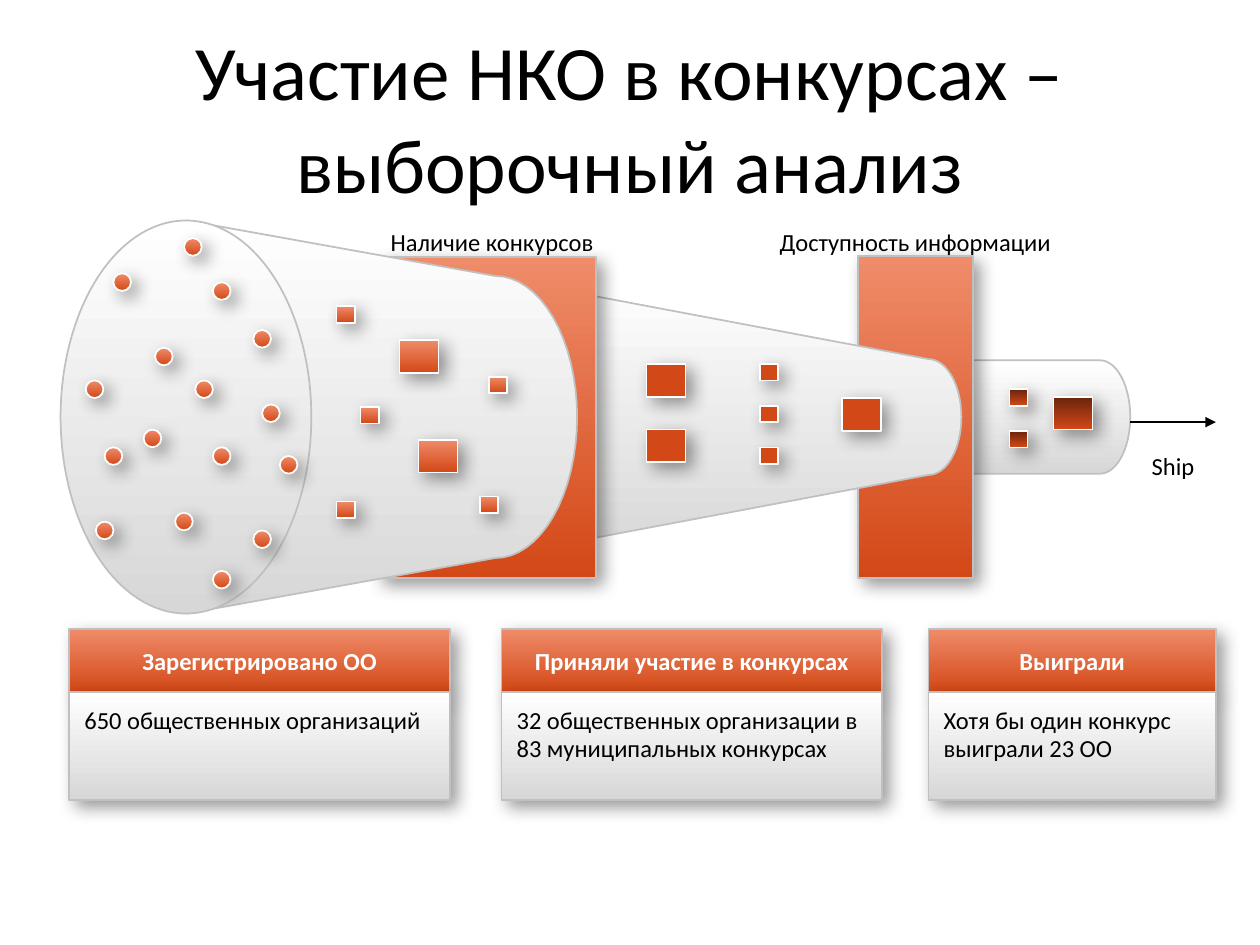
from math import cos, pi, sin

from lxml import etree
from pptx import Presentation
from pptx.dml.color import RGBColor
from pptx.enum.shapes import MSO_CONNECTOR, MSO_SHAPE
from pptx.enum.text import MSO_ANCHOR, PP_ALIGN
from pptx.oxml import parse_xml
from pptx.oxml.ns import nsdecls, qn
from pptx.util import Pt

RECT, OVAL = MSO_SHAPE.RECTANGLE, MSO_SHAPE.OVAL
STRAIGHT = MSO_CONNECTOR.STRAIGHT
CENTER, LEFT = PP_ALIGN.CENTER, PP_ALIGN.LEFT
TOP, MIDDLE = MSO_ANCHOR.TOP, MSO_ANCHOR.MIDDLE

COLORS = {
    "black": "000000", "white": "FFFFFF", "silver": "D7D7D7", "edge": "C0C0C0",
    "coral": "EF8C6A", "orange": "D34817", "brown": "69240C",
}
METAL = ("white", "silver")
WARM = ("coral", "orange")
FLAT = ("orange",)
DARK = ("brown", "orange")

DOTS = [
    (54, 72.7), (77, 91.4), (47.5, 119.5), (25.2, 129.6), (14.4, 91.4), (30.2, 30.2),
    (70.6, 10.1), (87.1, 35.3), (110.2, 62.6), (115.2, 105.1), (125.3, 134.6),
    (87.1, 129.6), (65.5, 167), (87.1, 200.2), (110.2, 177.1), (20.2, 172.1),
]
SMALL_SQUARES = [
    (WARM, [(157.7, 49), (171.4, 106.6), (157.7, 160.6), (239.8, 157.7), (244.8, 89.3)]),
    (FLAT, [(399.6, 82.1 + 23.8 * row) for row in range(3)]),
    (DARK, [(542.2, 96.5 + 23.8 * row) for row in range(2)]),
]
LARGE_SQUARES = [
    (WARM, [(193.7, 68.4), (204.5, 125.3)]),
    (FLAT, [(334.8, 82.1), (334.8, 119.5), (446.4, 101.5)]),
    (DARK, [(567.4, 100.8)]),
]
CARDS = [
    (39.6, 217.5, "Зарегистрировано ОО", "650 общественных организаций"),
    (286.6, 217.5, "Приняли участие в конкурсах",
     "32 общественных организации в 83 муниципальных конкурсах"),
    (530.6, 164.2, "Выиграли", "Хотя бы один конкурс выиграли 23 ОО"),
]


def rgb(name):
    return RGBColor.from_string(COLORS[name])


def paint(shape, fill, edge="edge"):
    shape.shadow.inherit = False
    if len(fill) == 1:
        shape.fill.solid()
        shape.fill.fore_color.rgb = rgb(fill[0])
    else:
        shape.fill.gradient()
        shape.fill.gradient_angle = 270
        for stop, name in zip(shape.fill.gradient_stops, fill):
            stop.color.rgb = rgb(name)
    shape.line.color.rgb = rgb(edge)
    shape.line.width = Pt(1)


def cast_shadow(shape):
    effects = shape.element.spPr.find(qn("a:effectLst"))
    effects.append(parse_xml(
        f'<a:outerShdw {nsdecls("a")} blurRad="{Pt(10)}" dist="{Pt(5)}" dir="2700000" '
        f'algn="tl" rotWithShape="0"><a:srgbClr val="{COLORS["black"]}">'
        '<a:alpha val="40000"/></a:srgbClr></a:outerShdw>'))


def add_block(slide, kind, box, fill, edge="edge", shadow=True):
    block = slide.shapes.add_shape(kind, *map(Pt, box))
    paint(block, fill, edge)
    if shadow:
        cast_shadow(block)
    return block


def write(shape, text, size=14, color="black", bold=False, align=CENTER,
          anchor=MIDDLE, insets=(0, 0, 0, 0), wrap=True):
    frame = shape.text_frame
    frame.word_wrap = wrap
    frame.vertical_anchor = anchor
    (frame.margin_left, frame.margin_top,
     frame.margin_right, frame.margin_bottom) = map(Pt, insets)
    paragraph = frame.paragraphs[0]
    paragraph.alignment = align
    run = paragraph.add_run()
    run.text = text
    run.font.name = "Calibri"
    run.font.size = Pt(size)
    run.font.bold = bold
    run.font.color.rgb = rgb(color)
    return paragraph


def add_title(slide, box):
    write(slide.shapes.add_textbox(*map(Pt, box)),
          "Участие НКО в конкурсах – выборочный анализ", size=44)


def add_card(slide, box, heading, details):
    left, top, width, height = box
    head_height = 36
    head = add_block(slide, RECT, (left, top, width, head_height), WARM)
    write(head, heading, color="white", bold=True)
    body = add_block(
        slide, RECT, (left, top + head_height, width, height - head_height), METAL)
    paragraph = write(body, details, align=LEFT, anchor=TOP, insets=(8.6, 8.6, 11.5, 5.8))
    paragraph.line_spacing = 0.95
    paragraph.space_after = Pt(8)


def add_cone(slide, left, middle, wide, shoulder, narrow, tip):
    steps = 32
    angles = [pi * step / steps - pi / 2 for step in range(steps + 1)]
    cap = [(shoulder + (tip - shoulder) * cos(angle), middle + narrow * sin(angle))
           for angle in angles]
    outline = slide.shapes.build_freeform(Pt(left), Pt(middle - wide))
    outline.add_line_segments(
        [(Pt(x), Pt(y)) for x, y in cap + [(left, middle + wide)]], close=True)
    paint(outline.convert_to_shape(), METAL)


def add_arrow(slide, start, end):
    arrow = slide.shapes.add_connector(STRAIGHT, *map(Pt, start + end))
    arrow.line.color.rgb = rgb("black")
    arrow.line.width = Pt(1)
    etree.SubElement(arrow.line._get_or_add_ln(), qn("a:tailEnd"), type="triangle")
    etree.SubElement(arrow._element.spPr, qn("a:effectLst"))


def add_funnel(slide, box):
    left, top, width, height = box
    middle = top + height / 2

    def place(x, y, w, h):
        return left + x, top + y, w, h

    def cone(start, wide, shoulder, narrow, tip):
        add_cone(slide, left + start, middle, wide, left + shoulder, narrow, left + tip)

    cone(520.6, 32.4, 594, 32.4, 611.3)
    add_block(slide, RECT, place(455.8, 20.2, 65.5, 184.3), WARM)
    cone(244.1, 80.6, 496, 33.1, 514.8)
    add_block(slide, RECT, place(181.4, 20.9, 124.6, 183.6), WARM)
    cone(72, 112.3, 248.4, 80.6, 295.2)
    add_block(slide, OVAL, place(0, 0, 143.3, height), METAL, shadow=False)

    pieces = [(OVAL, (10.1, 10.1), [(WARM, DOTS)]),
              (RECT, (10.4, 9.4), SMALL_SQUARES),
              (RECT, (22.3, 18.7), LARGE_SQUARES)]
    for kind, size, batches in pieces:
        for fill, spots in batches:
            for spot in spots:
                add_block(slide, kind, place(*spot, *size), fill, "white")

    for x, y, w, caption in [(187.9, 3.6, 117.4, "Наличие конкурсов"),
                             (410.4, 3.6, 156.2, "Доступность информации"),
                             (623.5, 131.8, 24.5, "Ship")]:
        label = slide.shapes.add_textbox(*map(Pt, place(x, y, w, 17)))
        write(label, caption, anchor=TOP, wrap=False)
    add_arrow(slide, (left + 611.3, top + 115.2), (left + width, top + 115.2))


def main():
    deck = Presentation()
    deck.slide_width, deck.slide_height = Pt(720), Pt(540)
    slide = deck.slides.add_slide(deck.slide_layouts[6])
    add_title(slide, (36, 41, 648, 51))
    for left, width, heading, details in CARDS:
        add_card(slide, (left, 359.3, width, 98), heading, details)
    add_funnel(slide, (34.6, 126, 660.2, 224.6))
    deck.save("out.pptx")


if __name__ == "__main__":
    main()
